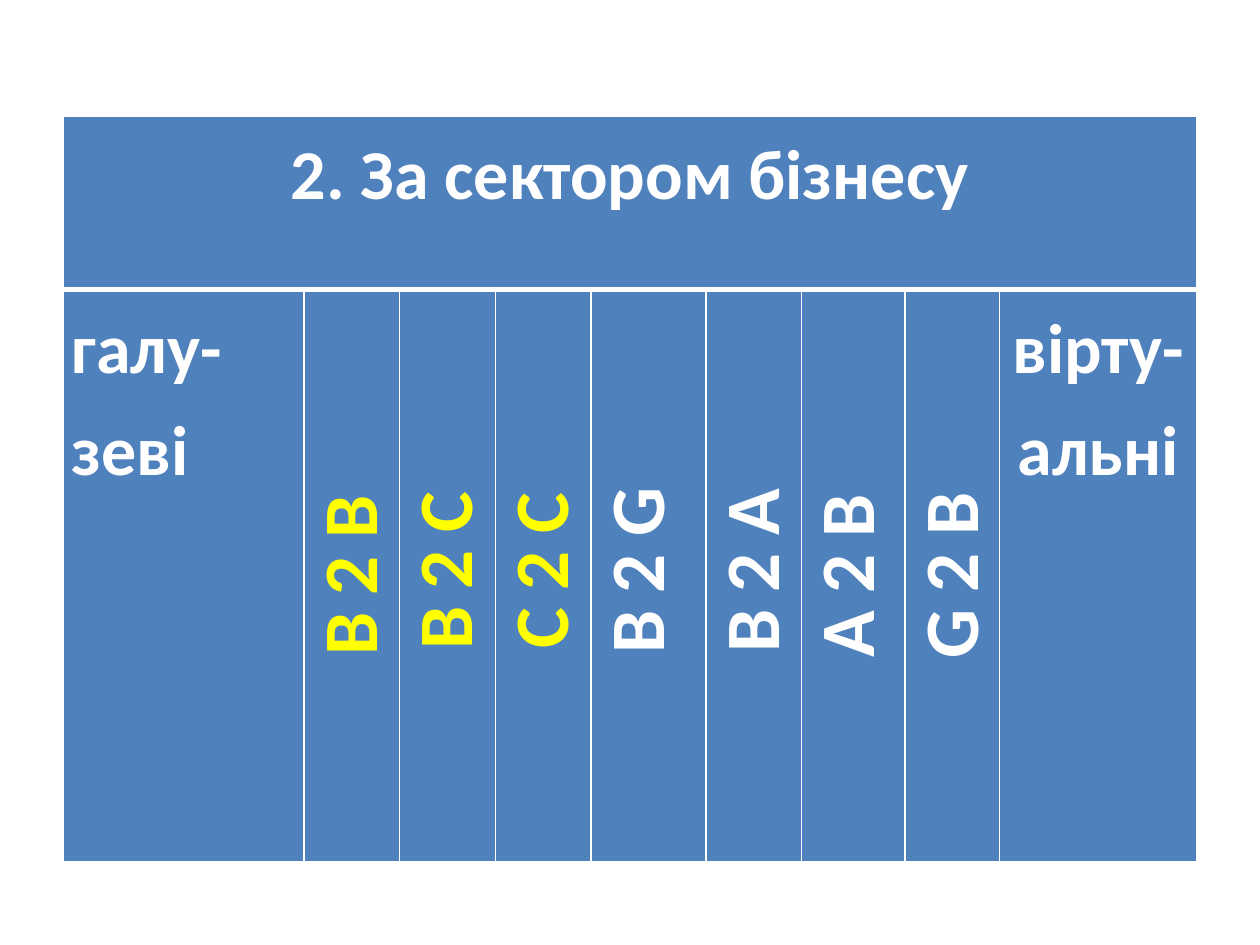
import pptx
import pptx.dml.color
import pptx.enum.text
import pptx.oxml
import pptx.oxml.ns
import pptx.util

Cm = pptx.util.Cm
Pt = pptx.util.Pt
CENTER = pptx.enum.text.PP_ALIGN.CENTER
LEFT = pptx.enum.text.PP_ALIGN.LEFT

COLORS = {"cell": "4F81BD", "text": "FFFFFF", "accent": "FFFF00"}
COL_WIDTHS = [4.85, 1.93, 1.93, 1.93, 2.31, 1.93, 2.08, 1.91, 3.97]
ROW_HEIGHTS = [3.5, 11.53]
MODELS = [
    ("B 2 B", "accent", 0),
    ("B 2 C", "accent", 0.2),
    ("C 2 C", "accent", 0.2),
    ("B 2 G", "text", 0.2),
    ("B 2 A", "text", 0.2),
    ("A 2 B", "text", 0),
    ("G 2 B", "text", 0),
]


def rgb(name):
    return pptx.dml.color.RGBColor.from_string(COLORS[name])


def style_cell(cell, top, bottom):
    cell.margin_left = cell.margin_right = Cm(0.18)
    cell.margin_top = cell.margin_bottom = 0
    tcPr = cell._tc.get_or_add_tcPr()
    for side, width in (("L", 1), ("R", 1), ("T", top), ("B", bottom)):
        tcPr.append(pptx.oxml.parse_xml(
            f'<a:ln{side} {pptx.oxml.ns.nsdecls("a")} w="{Pt(width)}">'
            f'<a:solidFill><a:srgbClr val="{COLORS["text"]}"/></a:solidFill>'
            f'</a:ln{side}>'))
    cell.fill.solid()
    cell.fill.fore_color.rgb = rgb("cell")


def write_cell(cell, text, size=40, color="text", align=CENTER, spacing=1.2):
    p = cell.text_frame.paragraphs[0]
    p.text = text
    p.alignment = align
    p.line_spacing = spacing
    font = p.runs[0].font
    font.name = "Calibri"
    font.size = Pt(size)
    font.bold = True
    font.color.rgb = rgb(color)
    return p


def write_model(cell, text, color, indent):
    cell._tc.get_or_add_tcPr().set("vert", "vert270")
    p = write_cell(cell, text, size=44, color=color, spacing=1.0)
    pPr = p._p.get_or_add_pPr()
    pPr.set("marL", str(Cm(indent)))
    pPr.set("indent", "0")


def add_sector_table(slide, left, top, width, height):
    table = slide.shapes.add_table(
        len(ROW_HEIGHTS), len(COL_WIDTHS),
        Cm(left), Cm(top), Cm(width), Cm(height)).table
    for col, share in zip(table.columns, COL_WIDTHS):
        col.width = Cm(width * share / sum(COL_WIDTHS))
    for row, share in zip(table.rows, ROW_HEIGHTS):
        row.height = Cm(height * share / sum(ROW_HEIGHTS))

    last = len(COL_WIDTHS) - 1
    for c in range(last + 1):
        style_cell(table.cell(0, c), top=1, bottom=3)
        style_cell(table.cell(1, c), top=3, bottom=1)

    table.cell(0, 0).merge(table.cell(0, last))
    write_cell(table.cell(0, 0), "2. За сектором бізнесу")
    write_cell(table.cell(1, 0), "галу-зеві", align=LEFT)
    for c, model in enumerate(MODELS, start=1):
        write_model(table.cell(1, c), *model)
    write_cell(table.cell(1, last), "вірту-альні")


def main():
    prs = pptx.Presentation()
    prs.slide_width = Cm(25.4)
    prs.slide_height = Cm(19.05)
    slide = prs.slides.add_slide(prs.slide_layouts[6])
    add_sector_table(slide, 1.27, 2.34, 22.86, 15.03)
    prs.save("out.pptx")


if __name__ == "__main__":
    main()
